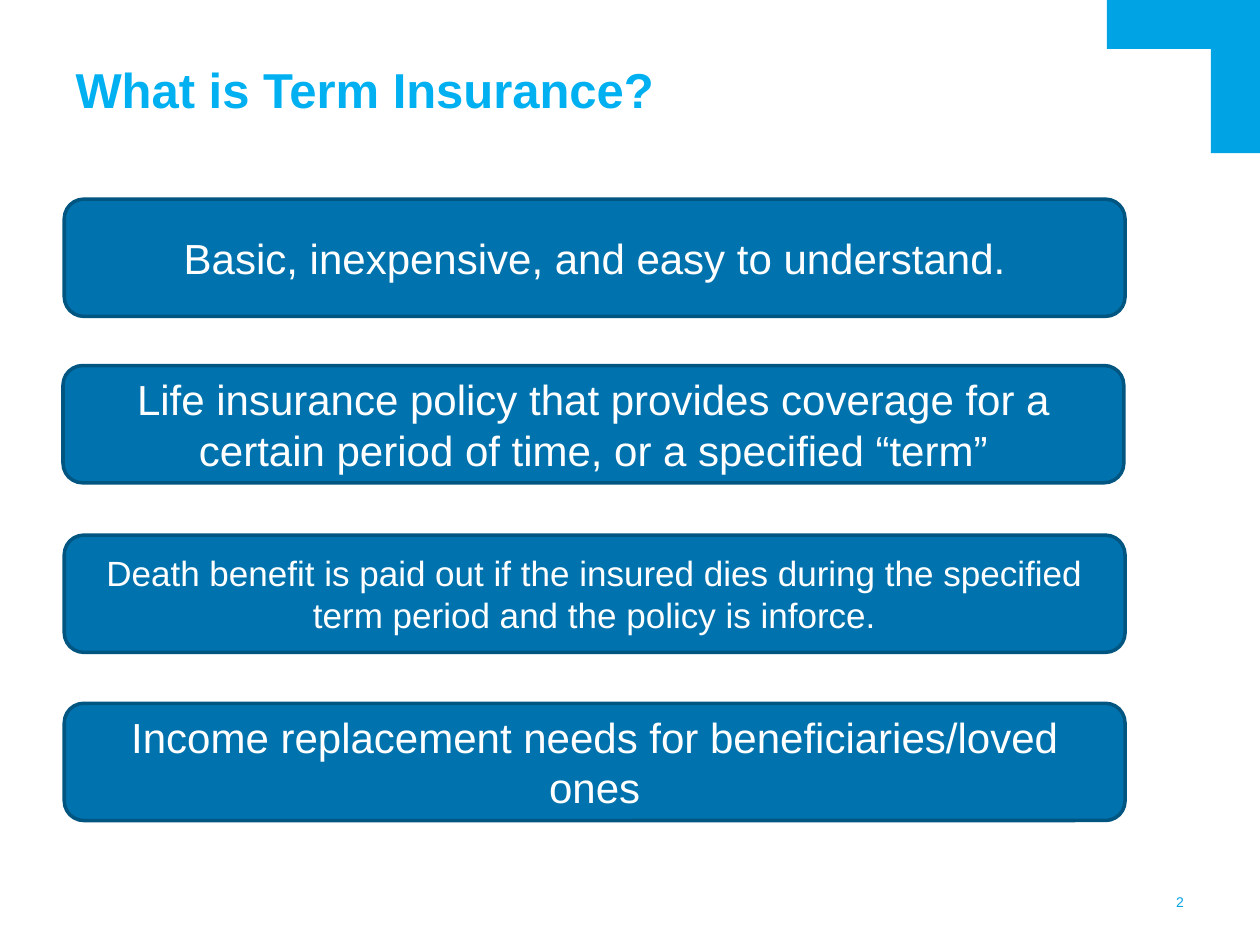
from dataclasses import dataclass

from pptx import Presentation
from pptx.dml.color import RGBColor
from pptx.enum.shapes import MSO_SHAPE
from pptx.enum.text import MSO_ANCHOR, PP_ALIGN
from pptx.shapes.autoshape import Shape
from pptx.slide import Slide
from pptx.util import Pt


@dataclass(frozen=True)
class Theme:
    font: str = "Arial"
    accent: str = "00A4E4"
    title: str = "00B0F0"
    card: str = "0073AE"
    card_line: str = "005581"
    card_text: str = "FFFFFF"
    title_size: float = 28
    large_size: float = 24
    medium_size: float = 20
    number_size: float = 8


@dataclass(frozen=True)
class Bounds:
    left: float
    top: float
    width: float
    height: float

    def in_points(self) -> tuple[Pt, Pt, Pt, Pt]:
        return Pt(self.left), Pt(self.top), Pt(self.width), Pt(self.height)


@dataclass(frozen=True)
class Card:
    text: str
    size: float
    left: float
    top: float


THEME = Theme()
SLIDE_WIDTH, SLIDE_HEIGHT = 720, 540
BAR_THICKNESS, BAR_LENGTH = 28, 87.5
CARD_WIDTH, CARD_HEIGHT = 606.2, 67

CARDS = [
    Card("Basic, inexpensive, and easy to understand.", THEME.large_size, 36.7, 113.8),
    Card("Life insurance policy that provides coverage for a certain period of time, "
         "or a specified “term”", THEME.large_size, 36, 208.9),
    Card("Death benefit is paid out if the insured dies during the specified term period "
         "and the policy is inforce.", THEME.medium_size, 36.7, 305.8),
    Card("Income replacement needs for beneficiaries/loved ones",
         THEME.large_size, 36.7, 401.9),
]


def write_text(box: Shape, text: str, *, size: float, color: str, bold: bool = False,
               align: PP_ALIGN = PP_ALIGN.LEFT, anchor: MSO_ANCHOR = MSO_ANCHOR.MIDDLE,
               wrap: bool = True) -> None:
    frame = box.text_frame
    frame.word_wrap = wrap
    frame.vertical_anchor = anchor
    para = frame.paragraphs[0]
    para.alignment = align
    span = para.add_run()
    span.text = text
    span.font.name = THEME.font
    span.font.size = Pt(size)
    span.font.bold = bold
    span.font.color.rgb = RGBColor.from_string(color)


def add_label(page: Slide, bounds: Bounds, text: str, **text_format) -> None:
    box = page.shapes.add_textbox(*bounds.in_points())
    frame = box.text_frame
    frame.margin_left = frame.margin_top = frame.margin_right = frame.margin_bottom = 0
    write_text(box, text, **text_format)


def add_filled(page: Slide, kind: MSO_SHAPE, bounds: Bounds, fill: str) -> Shape:
    shape = page.shapes.add_shape(kind, *bounds.in_points())
    shape.shadow.inherit = False
    shape.fill.solid()
    shape.fill.fore_color.rgb = RGBColor.from_string(fill)
    shape.line.fill.background()
    return shape


def add_card(page: Slide, card: Card) -> None:
    bounds = Bounds(card.left, card.top, CARD_WIDTH, CARD_HEIGHT)
    shape = add_filled(page, MSO_SHAPE.ROUNDED_RECTANGLE, bounds, THEME.card)
    shape.line.color.rgb = RGBColor.from_string(THEME.card_line)
    shape.line.width = Pt(2)
    write_text(shape, card.text, size=card.size, color=THEME.card_text,
               align=PP_ALIGN.CENTER)


def main() -> None:
    deck = Presentation()
    deck.slide_width, deck.slide_height = Pt(SLIDE_WIDTH), Pt(SLIDE_HEIGHT)
    page = deck.slides.add_slide(deck.slide_layouts[6])

    # Slide number
    add_label(page, Bounds(654.5, 510.5, 22, 10), "2", size=THEME.number_size,
              color=THEME.accent, align=PP_ALIGN.RIGHT)

    # Corner bars
    side_left = SLIDE_WIDTH - BAR_THICKNESS
    for bounds in (Bounds(SLIDE_WIDTH - BAR_LENGTH, 0, BAR_LENGTH, BAR_THICKNESS),
                   Bounds(side_left, 0, BAR_THICKNESS, BAR_LENGTH)):
        add_filled(page, MSO_SHAPE.RECTANGLE, bounds, THEME.accent)

    # Title
    add_label(page, Bounds(43.2, 43.2, 633.6, 24.5), "What is Term Insurance?",
              size=THEME.title_size, color=THEME.title, bold=True,
              anchor=MSO_ANCHOR.BOTTOM)

    # Cards
    for card in CARDS:
        add_card(page, card)

    deck.save("out.pptx")


if __name__ == "__main__":
    main()
